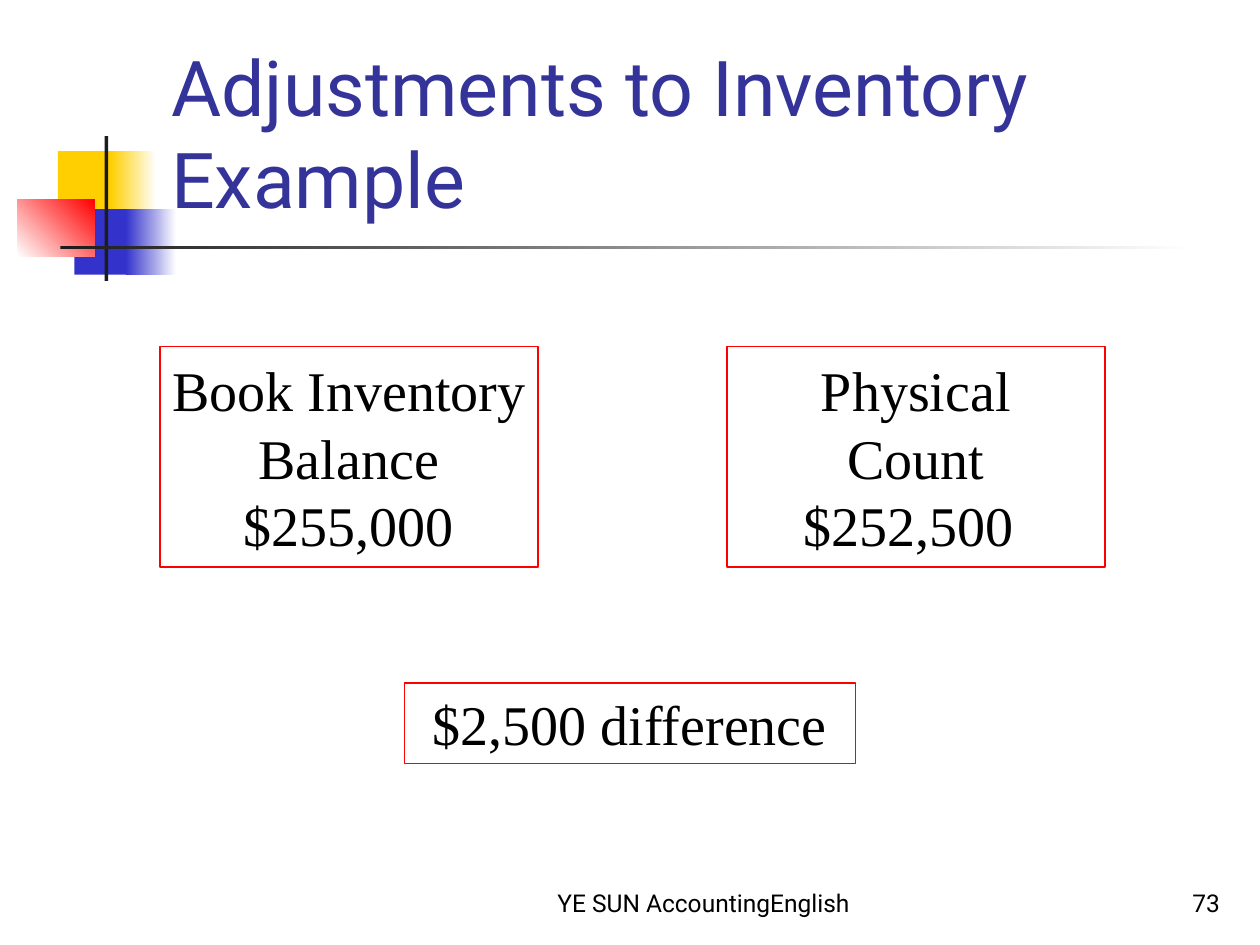
from dataclasses import dataclass
from typing import Optional

from pptx import Presentation
from pptx.dml.color import RGBColor
from pptx.enum.shapes import MSO_SHAPE
from pptx.enum.text import MSO_ANCHOR, PP_ALIGN
from pptx.util import Inches, Pt

WHITE = RGBColor(0xFF, 0xFF, 0xFF)
BLACK = RGBColor(0x00, 0x00, 0x00)
YELLOW = RGBColor(0xFF, 0xCF, 0x01)
BLUE = RGBColor(0x33, 0x33, 0xCC)
RED = RGBColor(0xFF, 0x00, 0x00)
CHARCOAL = RGBColor(0x1C, 0x1C, 0x1C)
TITLE_BLUE = RGBColor(0x33, 0x33, 0x99)


@dataclass(frozen=True)
class Area:
    left: float
    top: float
    width: float
    height: float

    def lengths(self):
        return [Inches(n) for n in (self.left, self.top, self.width, self.height)]


@dataclass(frozen=True)
class Block:
    area: Area
    color: RGBColor
    fade_to: Optional[RGBColor] = None
    angle: float = 0


@dataclass(frozen=True)
class Figure:
    area: Area
    lines: tuple[str, ...]
    wrap: bool = False


@dataclass(frozen=True)
class Label:
    area: Area
    text: str
    size: int
    color: RGBColor
    align: PP_ALIGN


MOTIF = (
    Block(Area(0.46, 1.2, 0.48, 0.52), YELLOW),
    Block(Area(0.88, 1.2, 0.36, 0.52), YELLOW, WHITE),
    Block(Area(0.59, 1.66, 0.46, 0.52), BLUE),
    Block(Area(1, 1.66, 0.4, 0.52), BLUE, WHITE),
    Block(Area(0.14, 1.58, 0.61, 0.46), WHITE, RED, 45),
    Block(Area(0.83, 1.08, 0.03, 1.15), CHARCOAL),
    Block(Area(0.48, 1.95, 9, 0.03), CHARCOAL, WHITE),
)
FIGURES = (
    Figure(Area(1.27, 2.75, 3, 1.75), ("Book Inventory", "Balance", "$255,000")),
    Figure(Area(5.77, 2.75, 3, 1.75), ("Physical", "Count", "$252,500 ")),
    Figure(Area(3.21, 5.42, 3.58, 0.64), ("$2,500 difference",), wrap=True),
)
LABELS = (
    Label(Area(4, 6.83, 3.17, 0.5), "YE SUN AccountingEnglish", 14, BLACK, PP_ALIGN.CENTER),
    Label(Area(7.7, 6.83, 2.08, 0.5), "73", 14, BLACK, PP_ALIGN.RIGHT),
    Label(Area(1.26, 0.23, 8.52, 1.6), "Adjustments to Inventory Example", 44, TITLE_BLUE, PP_ALIGN.LEFT),
)


def add_rectangle(slide, area: Area):
    rectangle = slide.shapes.add_shape(MSO_SHAPE.RECTANGLE, *area.lengths())
    rectangle.shadow.inherit = False
    return rectangle


def style_paragraph(paragraph, font_name: str, size: int, color: RGBColor, align: PP_ALIGN) -> None:
    paragraph.alignment = align
    paragraph.font.name = font_name
    paragraph.font.size = Pt(size)
    paragraph.font.color.rgb = color


def draw_block(slide, block: Block) -> None:
    rectangle = add_rectangle(slide, block.area)
    rectangle.line.fill.background()
    fill = rectangle.fill
    if block.fade_to is None:
        fill.solid()
        fill.fore_color.rgb = block.color
        return
    fill.gradient()
    fill.gradient_angle = block.angle
    for stop, color in zip(fill.gradient_stops, (block.color, block.fade_to)):
        stop.color.rgb = color


def draw_figure(slide, figure: Figure) -> None:
    rectangle = add_rectangle(slide, figure.area)
    rectangle.fill.background()
    rectangle.line.color.rgb = RED
    rectangle.line.width = Pt(1)
    frame = rectangle.text_frame
    frame.word_wrap = figure.wrap
    frame.vertical_anchor = MSO_ANCHOR.MIDDLE
    frame.text = "\n".join(figure.lines)
    for paragraph in frame.paragraphs:
        style_paragraph(paragraph, "Times New Roman", 32, BLACK, PP_ALIGN.CENTER)


def draw_label(slide, label: Label) -> None:
    frame = slide.shapes.add_textbox(*label.area.lengths()).text_frame
    frame.word_wrap = True
    frame.vertical_anchor = MSO_ANCHOR.BOTTOM
    frame.text = label.text
    style_paragraph(frame.paragraphs[0], "Roboto", label.size, label.color, label.align)


def main() -> None:
    """Build the inventory adjustment example slide."""
    presentation = Presentation()
    presentation.slide_width = Inches(10)
    presentation.slide_height = Inches(7.5)
    slide = presentation.slides.add_slide(presentation.slide_layouts[6])
    for block in MOTIF:
        draw_block(slide, block)
    for figure in FIGURES:
        draw_figure(slide, figure)
    for label in LABELS:
        draw_label(slide, label)
    presentation.save("out.pptx")


if __name__ == "__main__":
    main()
